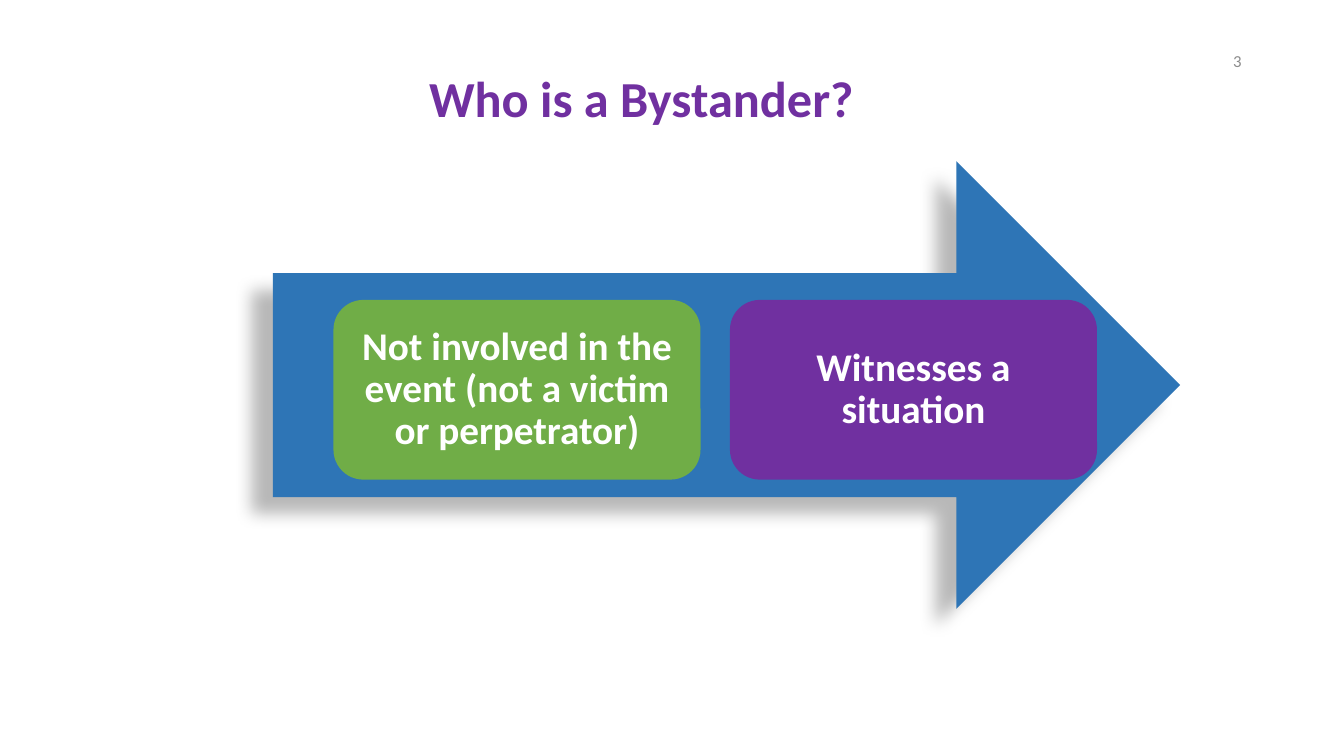
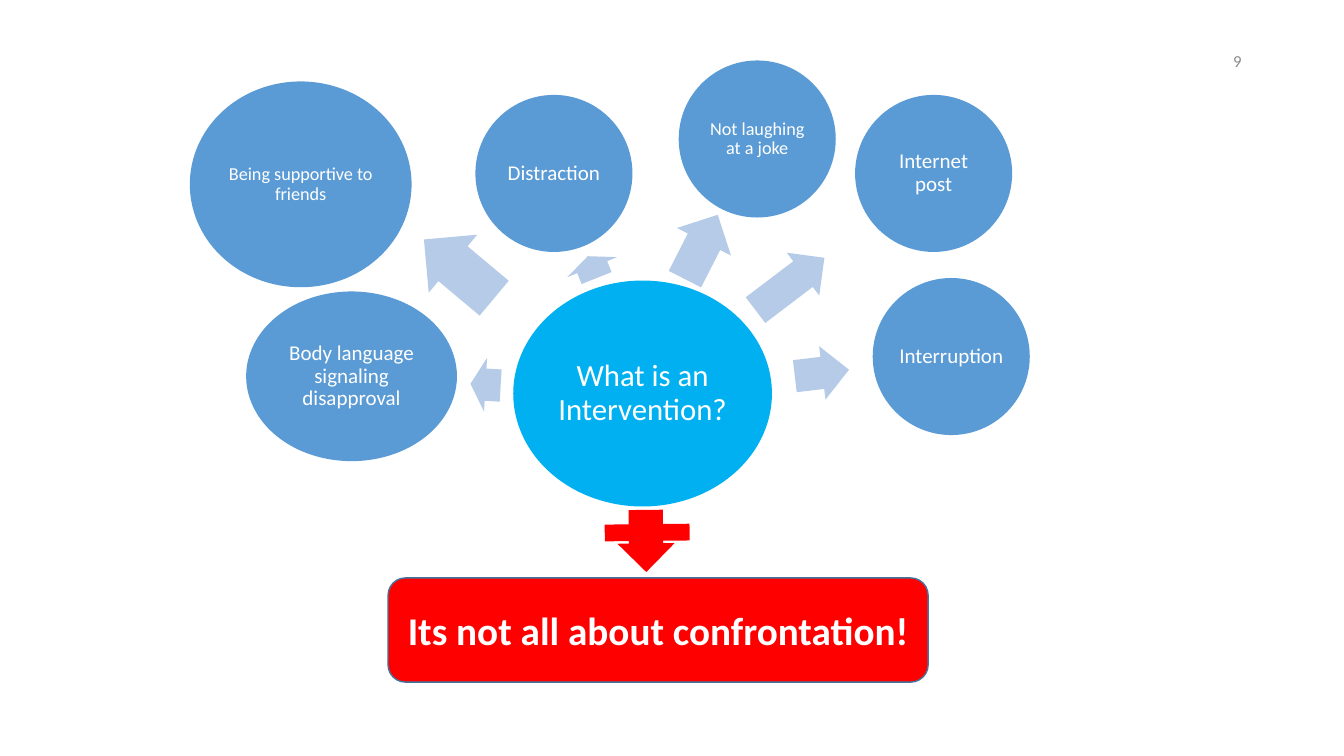
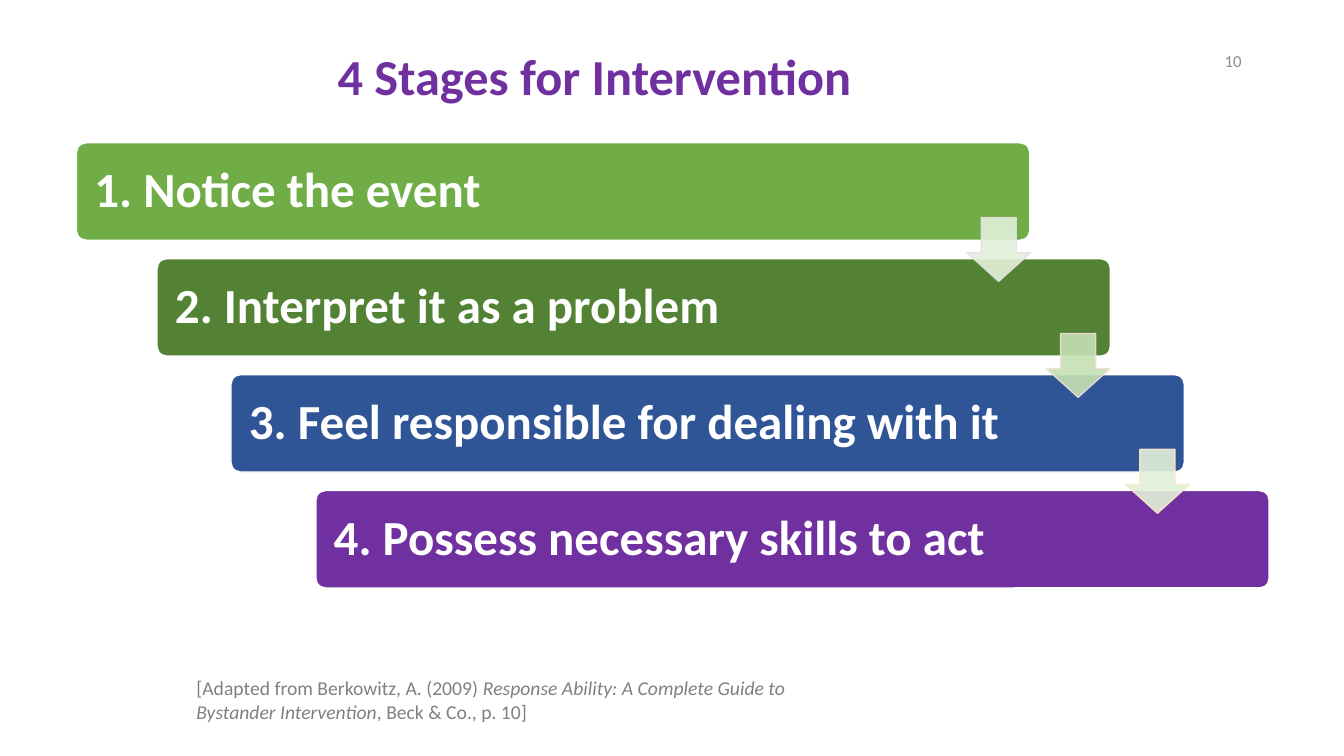
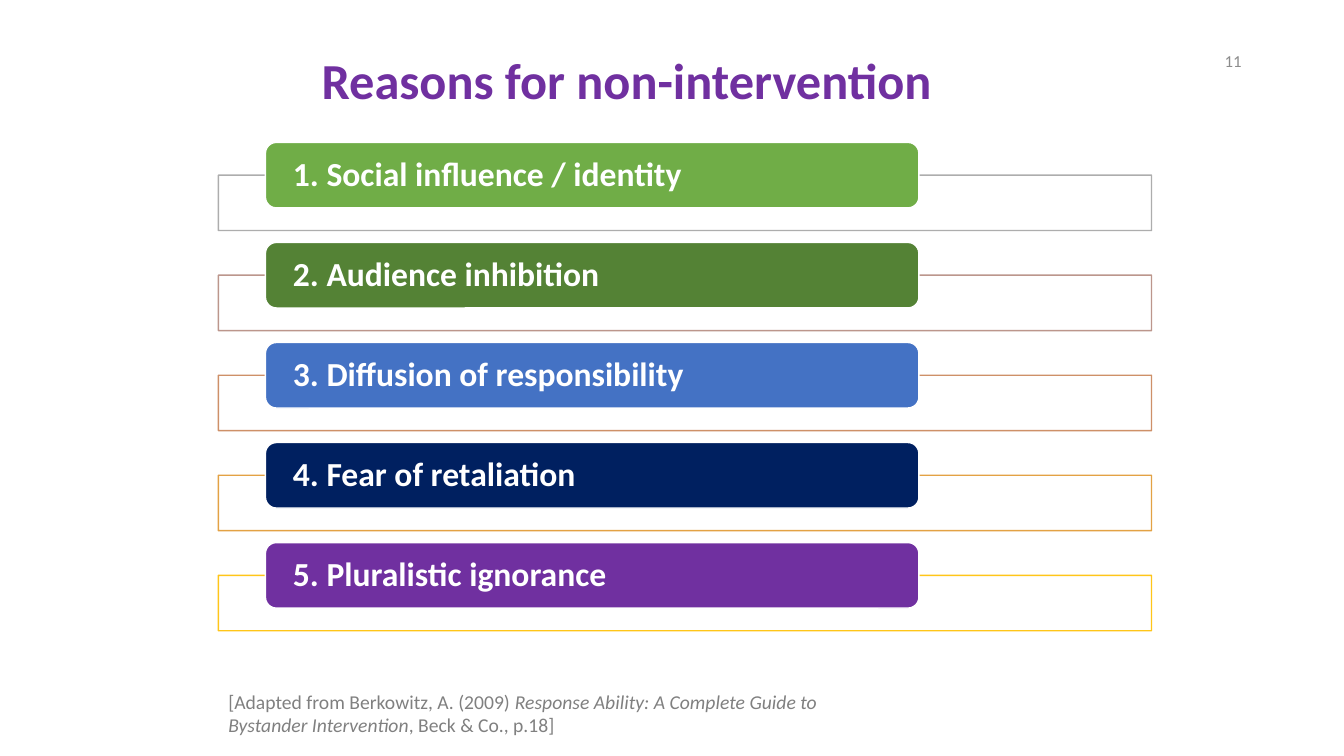
import dataclasses

import lxml.etree
import pptx
import pptx.dml.color
import pptx.enum.shapes
import pptx.enum.text
import pptx.oxml.ns
import pptx.util

KIND = pptx.enum.shapes.MSO_SHAPE
ALIGN = pptx.enum.text.PP_ALIGN
ANCHOR = pptx.enum.text.MSO_ANCHOR
qn = pptx.oxml.ns.qn


@dataclasses.dataclass(frozen=True)
class Theme:
    # The slide is a grid of square cells, 160 columns by 90 rows
    columns: int = 160
    rows: int = 90
    cell: int = 76200
    font: str = "Calibri"
    # Colours
    white: str = "FFFFFF"
    purple: str = "7030A0"
    green: str = "70AD47"
    dark_green: str = "548235"
    blue: str = "2E75B6"
    mid_blue: str = "4472C4"
    deep_blue: str = "2F5597"
    navy: str = "002060"
    sky: str = "00B0F0"
    bubble: str = "5B9BD5"
    pale_blue: str = "B5CBE7"
    edge_blue: str = "43739E"
    red: str = "FF0000"
    mint: str = "E2F0D9"
    pale_green: str = "C5E0B4"
    number_grey: str = "8C8C8C"
    source_grey: str = "808080"
    step_edges: tuple = ("E1E1E1", "F1DDD5", "FFE9CB")
    frame_edges: tuple = ("A5A5A5", "B58B80", "C98558", "E19830", "FFC000")
    # Type sizes
    title: int = 36
    stage: int = 35
    statement: int = 28
    reason: int = 24
    centre: int = 22
    example: int = 15
    small_example: int = 13
    source: int = 14
    number: int = 12


class Deck:
    def __init__(self, theme):
        self.theme = theme
        self.file = pptx.Presentation()
        self.file.slide_width = self.cells(theme.columns)
        self.file.slide_height = self.cells(theme.rows)
        self.slide = None

    def cells(self, count):
        return pptx.util.Emu(round(count * self.theme.cell))

    def area(self, box):
        return [self.cells(length) for length in box]

    @staticmethod
    def apply(target, values):
        for name, value in values.items():
            setattr(target, name, value)

    @staticmethod
    def paint(fill, colour, opacity=100):
        fill.solid()
        fill.fore_color.rgb = pptx.dml.color.RGBColor.from_string(colour)
        if opacity < 100:
            for rgb in fill._xPr.iter(qn("a:srgbClr")):
                lxml.etree.SubElement(rgb, qn("a:alpha"), val=str(opacity * 1000))

    def fill_frame(self, frame, runs, size, colour, frame_format, line_format, bold=False):
        """Fill a text frame with one paragraph of (words, italic) runs."""
        self.apply(frame, frame_format)
        paragraph = frame.paragraphs[0]
        self.apply(paragraph, line_format)
        for words, italic in runs:
            run = paragraph.add_run()
            run.text = words
            self.apply(run.font, {"name": self.theme.font, "size": pptx.util.Pt(size),
                                  "bold": bold, "italic": italic})
            run.font.color.rgb = pptx.dml.color.RGBColor.from_string(colour)

    def text(self, box, runs, size, colour, frame_format, align=ALIGN.LEFT, bold=False):
        frame = self.slide.shapes.add_textbox(*self.area(box)).text_frame
        self.fill_frame(frame, runs, size, colour, frame_format, {"alignment": align}, bold)

    def start(self, number):
        self.slide = self.file.slides.add_slide(self.file.slide_layouts[6])
        self.text((113, 4.8, 36, 4.8), [(number, False)], self.theme.number,
                  self.theme.number_grey,
                  {"word_wrap": True, "vertical_anchor": ANCHOR.MIDDLE}, ALIGN.RIGHT)

    def title(self, left, top, width, words):
        self.text((left, top, width, 8.5), [(words, False)], self.theme.title,
                  self.theme.purple, {"word_wrap": False}, bold=True)

    def source(self, left, top, width, page):
        book = "Response Ability: A Complete Guide to Bystander Intervention"
        runs = [("[Adapted from Berkowitz, A. (2009) ", False), (book, True),
                (f", Beck & Co., {page}]", False)]
        self.text((left, top, width, 6.8), runs, self.theme.source,
                  self.theme.source_grey, {"word_wrap": True})

    def shape(self, kind, box, colour, edge=None, opacity=100, turn=0, adjust=()):
        shape = self.slide.shapes.add_shape(kind, *self.area(box))
        shape.shadow.inherit = False
        shape.rotation = turn
        for index, value in enumerate(adjust):
            shape.adjustments[index] = value
        self.paint(shape.fill, colour, opacity)
        if edge:
            shape.line.width = pptx.util.Pt(1)
            self.paint(shape.line.fill, edge, opacity)
        else:
            shape.line.fill.background()
        return shape

    def label(self, shape, words, size, inset, align=ALIGN.CENTER, bold=True, spacing=0.9):
        across, down = (self.cells(length) for length in inset)
        frame_format = {"word_wrap": True, "vertical_anchor": ANCHOR.MIDDLE,
                        "margin_left": across, "margin_right": across,
                        "margin_top": down, "margin_bottom": down}
        self.fill_frame(shape.text_frame, [(words, False)], size, self.theme.white,
                        frame_format, {"alignment": align, "line_spacing": spacing}, bold)

    def bubble(self, box, words, size, colour):
        self.label(self.shape(KIND.OVAL, box, colour), words, size, (0.25, 0.25), bold=False)

    def pointer(self, box, turn, colour):
        self.shape(KIND.RIGHT_ARROW, box, colour, turn=turn, adjust=(0.6, 0.5))

    def cast_shadow(self, shape, blur, distance, angle, opacity):
        effects = shape._element.spPr.find(qn("a:effectLst"))
        shadow = lxml.etree.SubElement(
            effects, qn("a:outerShdw"), blurRad=str(pptx.util.Pt(blur)),
            dist=str(pptx.util.Pt(distance)), dir=str(angle * 60000), rotWithShape="0")
        black = lxml.etree.SubElement(shadow, qn("a:srgbClr"), val="000000")
        lxml.etree.SubElement(black, qn("a:alpha"), val=str(opacity * 1000))


def bystander(deck):
    theme = deck.theme
    deck.start("3")
    deck.title(49.9, 7.4, 54.1, "Who is a Bystander?")
    arrow = deck.shape(KIND.RIGHT_ARROW, (32.5, 19.2, 108, 53.3), theme.blue)
    deck.cast_shadow(arrow, 11.8, 19.7, 141, 28)
    traits = [("Not involved in the event (not a victim or perpetrator)", theme.green),
              ("Witnesses a situation", theme.purple)]
    for index, (words, colour) in enumerate(traits):
        card = deck.shape(KIND.ROUNDED_RECTANGLE,
                          (39.7 + 47.2 * index, 35.7, 43.7, 21.4), colour)
        deck.label(card, words, theme.statement, (1.4, 1.4))


def intervention(deck):
    theme = deck.theme
    deck.start("9")
    deck.bubble((61.1, 33.4, 30.8, 26.9), "What is an Intervention?", theme.centre, theme.sky)

    # Examples around the centre
    circle = (18.7, 18.7)
    examples = [
        ((56.6, 11.3, *circle), "Distraction", theme.example),
        ((103.9, 33.1, *circle), "Interruption", theme.example),
        ((101.8, 11.3, *circle), "Internet post", theme.example),
        ((29.3, 34.7, 25.1, 20.2), "Body language signaling disapproval", theme.example),
        ((80.8, 7.2, *circle), "Not laughing at a joke", theme.small_example),
        ((22.6, 9.7, 26.4, 24.5), "Being supportive to friends", theme.small_example),
    ]
    for box, words, size in examples:
        deck.bubble(box, words, size, theme.bubble)

    # Arrows from the centre to the examples
    for box, turn in [((69.1, 28.6, 2.8, 6.4), 248.1), ((94.6, 41.2, 6.5, 6.4), 353.2),
                      ((88.9, 30.6, 10.3, 6.4), 322.8), ((56, 42.6, 3.6, 6.4), 183.3),
                      ((49.2, 27.5, 10.9, 9), 219.9), ((79.2, 25.8, 8.6, 7.2), 297)]:
        deck.pointer(box, turn, theme.pale_blue)

    # Conclusion
    conclusion = deck.shape(KIND.ROUNDED_RECTANGLE, (46.2, 68.8, 64.3, 12.4),
                            theme.red, theme.edge_blue)
    deck.label(conclusion, "Its not all about confrontation!", theme.statement,
               (1.2, 0.6), spacing=1)
    deck.pointer((73.2, 61, 7.4, 6.8), 89.4, theme.red)
    deck.shape(KIND.RECTANGLE, (72, 62.4, 10.1, 2), theme.red, turn=359.4)


def stages(deck):
    theme = deck.theme
    row_step = 13.8
    deck.start("10")
    deck.title(39, 4.8, 67.3, "4 Stages for Intervention")
    steps = [(9.1, "1. Notice the event", theme.green),
             (18.7, "2. Interpret it as a problem", theme.dark_green),
             (27.5, "3. Feel responsible for dealing with it", theme.deep_blue),
             (37.6, "4. Possess necessary skills to act", theme.purple)]
    for index, (left, words, colour) in enumerate(steps):
        bar = deck.shape(KIND.ROUNDED_RECTANGLE, (left, 17 + row_step * index, 113.5, 11.6),
                         colour, theme.white, adjust=(0.1,))
        deck.label(bar, words, theme.stage, (1.8, 1.8), ALIGN.LEFT)

    # Arrows from each stage to the next
    fills = (theme.mint, theme.pale_green, theme.mint)
    for index, (colour, edge) in enumerate(zip(fills, theme.step_edges)):
        deck.shape(KIND.DOWN_ARROW,
                   (115.1 + 9.45 * index, 25.9 + row_step * index, 7.6, 7.6),
                   colour, edge, opacity=90, adjust=(0.55, 0.45))
    deck.source(22.2, 79.9, 79, "p. 10")


def reasons(deck):
    theme = deck.theme
    deck.start("11")
    deck.title(37.1, 5.2, 78.4, "Reasons for non-intervention")
    barriers = [("1. Social influence / identity", theme.green),
                ("2. Audience inhibition", theme.dark_green),
                ("3. Diffusion of responsibility", theme.mid_blue),
                ("4. Fear of retaliation", theme.navy),
                ("5. Pluralistic ignorance", theme.purple)]
    for index, ((words, colour), edge) in enumerate(zip(barriers, theme.frame_edges)):
        drop = 11.91 * index
        deck.shape(KIND.RECTANGLE, (26, 20.85 + drop, 111.1, 6.6), theme.white, edge, opacity=90)
        tab = deck.shape(KIND.ROUNDED_RECTANGLE, (31.6, 16.95 + drop, 77.8, 7.8),
                         colour, theme.white)
        deck.label(tab, words, theme.reason, (2.9, 0), ALIGN.LEFT)
    deck.source(26, 81.5, 75.1, "p.18")


def main():
    deck = Deck(Theme())
    for build in (bystander, intervention, stages, reasons):
        build(deck)
    deck.file.save("out.pptx")


if __name__ == "__main__":
    main()
